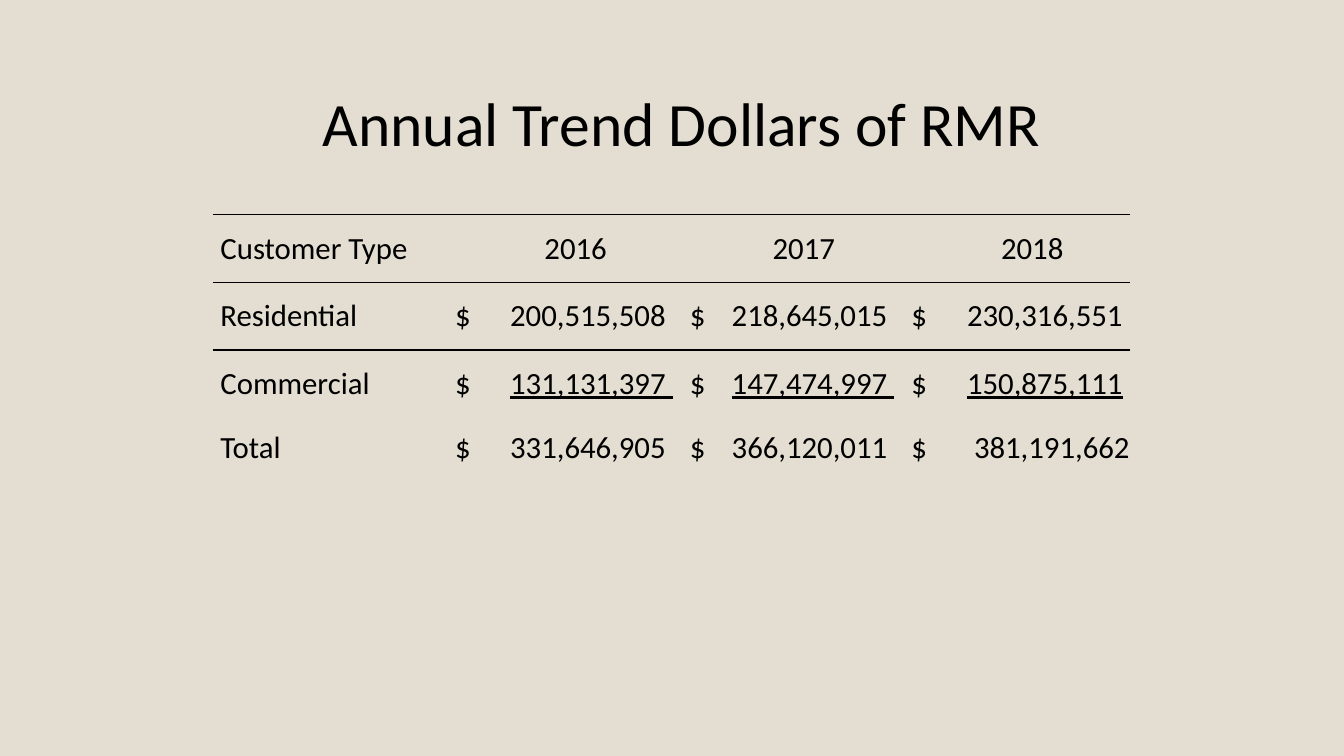
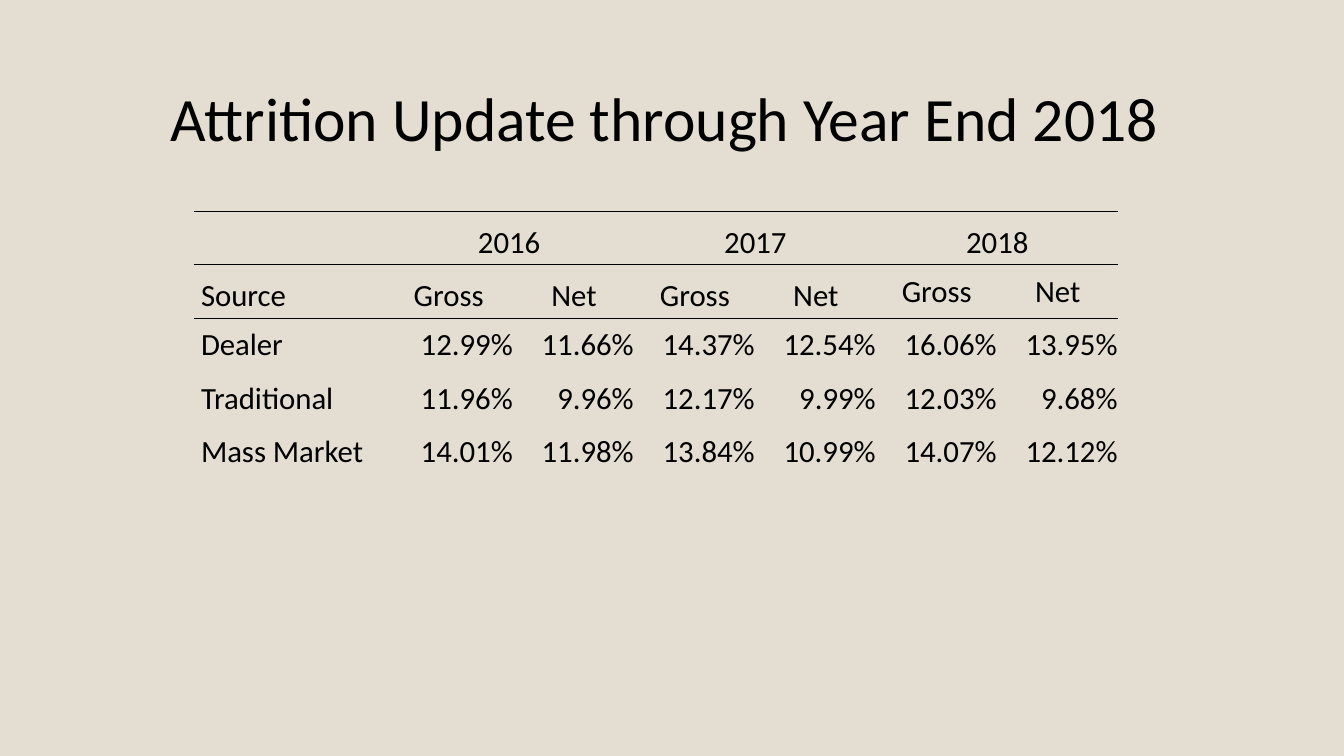
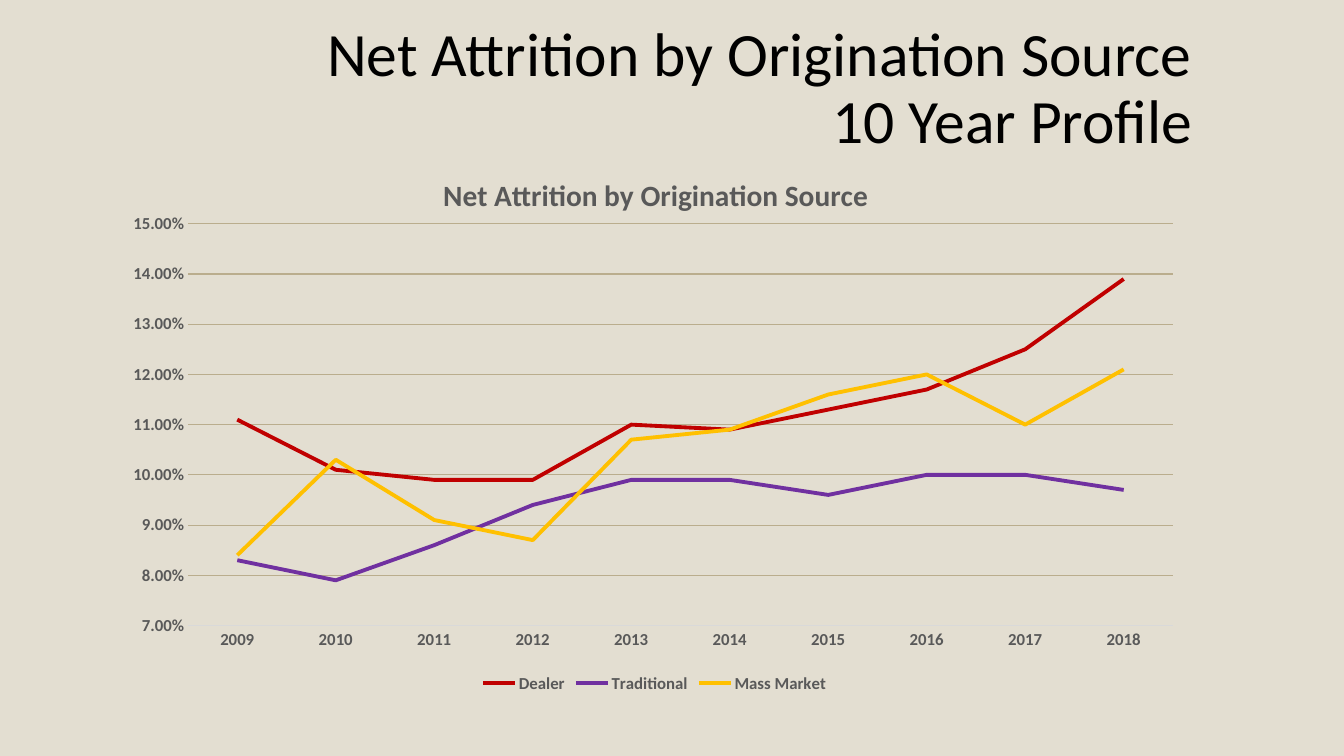
from dataclasses import dataclass

from pptx import Presentation
from pptx.chart.data import CategoryChartData
from pptx.dml.color import RGBColor
from pptx.enum.chart import (
    XL_CHART_TYPE, XL_LEGEND_POSITION, XL_MARKER_STYLE, XL_TICK_MARK)
from pptx.enum.text import MSO_ANCHOR, PP_ALIGN
from pptx.oxml import parse_xml
from pptx.oxml.ns import nsdecls, qn
from pptx.util import Pt

LINE = XL_CHART_TYPE.LINE
LEGEND_BOTTOM = XL_LEGEND_POSITION.BOTTOM
NO_MARKER = XL_MARKER_STYLE.NONE
NO_TICK = XL_TICK_MARK.NONE
MIDDLE, BOTTOM = MSO_ANCHOR.MIDDLE, MSO_ANCHOR.BOTTOM
LEFT, CENTER, RIGHT = PP_ALIGN.LEFT, PP_ALIGN.CENTER, PP_ALIGN.RIGHT
NO_STYLE_TABLE = "{2D5ABB26-0587-4C30-8999-92F81FD0307C}"
BLANK_LAYOUT = 6


@dataclass(frozen=True)
class Theme:
    font: str = "Calibri"
    paper: str = "E3DED1"
    ink: str = "000000"
    chart_ink: str = "595959"
    axis: str = "D9D9D9"
    grid: str = "BAAD8D"
    title_size: float = 44
    table_size: float = 22
    chart_title_size: float = 21
    chart_size: float = 12


THEME = Theme()

# Cell formats: alignment and insets (side, top and bottom)
CELL_KINDS = {
    "label": (LEFT, 5.2, 2.6),
    "head": (CENTER, 5.2, 2.6),
    "sign": (RIGHT, 5.2, 2.6),
    "number": (RIGHT, 0.5, 0.5),
}

RMR_ROWS = [
    ["Customer Type", "", "2016", "", "2017", "", "2018"],
    ["Residential", "$", "200,515,508 ", "$", "218,645,015 ", "$", "230,316,551 "],
    ["Commercial", "$", "131,131,397 ", "$", "147,474,997 ", "$", "150,875,111"],
    ["Total", "$", "331,646,905 ", "$", "366,120,011 ", "$", "381,191,662"],
]

ATTRITION_ROWS = [
    ["", "2016", "", "2017", "", "2018", ""],
    ["Source"] + ["Gross", "Net"] * 3,
    ["Dealer", "12.99%", "11.66%", "14.37%", "12.54%", "16.06%", "13.95%"],
    ["Traditional", "11.96%", "9.96%", "12.17%", "9.99%", "12.03%", "9.68%"],
    ["Mass Market", "14.01%", "11.98%", "13.84%", "10.99%", "14.07%", "12.12%"],
]

YEARS = [str(year) for year in range(2009, 2019)]
NET_ATTRITION = {
    "Dealer": ("C00000", [0.111, 0.101, 0.099, 0.099, 0.11,
                          0.109, 0.113, 0.117, 0.125, 0.139]),
    "Traditional": ("7030A0", [0.083, 0.079, 0.086, 0.094, 0.099,
                               0.099, 0.096, 0.1, 0.1, 0.097]),
    "Mass Market": ("FFC000", [0.084, 0.103, 0.091, 0.087, 0.107,
                               0.109, 0.116, 0.12, 0.11, 0.121]),
}


def rgb(code):
    return RGBColor.from_string(code)


def apply(target, values):
    for name, value in values.items():
        setattr(target, name, value)


def style_font(font, size, color, bold=False):
    apply(font, {"name": THEME.font, "size": Pt(size), "bold": bold})
    font.color.rgb = rgb(color)


def points(*lengths):
    return [Pt(length) for length in lengths]


# Titles
def add_page(deck, title, frame):
    page = deck.slides.add_slide(deck.slide_layouts[BLANK_LAYOUT])
    box = page.shapes.add_textbox(*points(*frame))
    apply(box.text_frame, {"word_wrap": True, "vertical_anchor": MIDDLE})
    para = box.text_frame.paragraphs[0]
    para.text = title
    apply(para, {"alignment": RIGHT, "line_spacing": 0.9})
    for span in para.runs:
        style_font(span.font, THEME.title_size, THEME.ink)
    return page


# Tables
def add_border(cell, side):
    edge = parse_xml(
        f'<a:ln{side} {nsdecls("a")} w="{Pt(1)}"><a:solidFill>'
        f'<a:srgbClr val="{THEME.ink}"/></a:solidFill></a:ln{side}>')
    cell._tc.get_or_add_tcPr().insert(0, edge)


def add_span(para, text):
    span = para.add_run()
    span.text = text
    style_font(span.font, THEME.table_size, THEME.ink)


def fill_cell(cell, text, kind, anchor):
    alignment, side, edge = CELL_KINDS[kind]
    apply(cell, {"margin_left": Pt(side), "margin_right": Pt(side),
                 "margin_top": Pt(edge), "margin_bottom": Pt(edge),
                 "vertical_anchor": anchor})
    cell.fill.background()
    para = cell.text_frame.paragraphs[0]
    para.alignment = alignment
    if text:
        add_span(para, text)


def add_ruled_table(page, origin, widths, heights, rows, kinds, head_rows, head_anchor):
    size = sum(widths), sum(heights)
    frame = page.shapes.add_table(len(rows), len(widths), *points(*origin, *size))
    table = frame.table
    apply(table, {"first_row": False, "horz_banding": False})
    table._tbl.tblPr.find(qn("a:tableStyleId")).text = NO_STYLE_TABLE
    for column, width in zip(table.columns, widths):
        column.width = Pt(width)
    for row, height in zip(table.rows, heights):
        row.height = Pt(height)
    for r, texts in enumerate(rows):
        for c, text in enumerate(texts):
            is_head = r < head_rows
            kind = "head" if is_head and c else kinds[c]
            cell = table.cell(r, c)
            fill_cell(cell, text, kind, head_anchor if is_head else MIDDLE)
            # Rules lie above the first row and below the first two
            if r < 2:
                add_border(cell, "B")
            if r == 0:
                add_border(cell, "T")
    return table


# Chart
def set_layout(parent, index, values):
    old = parent.find(qn("c:layout"))
    if old is not None:
        parent.remove(old)
    items = "".join(f'<c:{name} val="{value}"/>' for name, value in values.items())
    parent.insert(index, parse_xml(
        f'<c:layout {nsdecls("c")}><c:manualLayout>{items}</c:manualLayout></c:layout>'))


def add_line_chart(page, frame, title, title_origin, plot_frame, categories, series):
    data = CategoryChartData(number_format="0.00%")
    data.categories = categories
    for name, (_, values) in series.items():
        data.add_series(name, values)
    chart = page.shapes.add_chart(LINE, *points(*frame), data).chart
    style_font(chart.font, THEME.chart_size, THEME.chart_ink, bold=True)

    para = chart.chart_title.text_frame.paragraphs[0]
    span = para.add_run()
    span.text = title
    style_font(span.font, THEME.chart_title_size, THEME.chart_ink, bold=True)

    for line, (color, _) in zip(chart.plots[0].series, series.values()):
        line.smooth = False
        line.marker.style = NO_MARKER
        line.format.line.width = Pt(2.75)
        line.format.line.color.rgb = rgb(color)
    chart.plots[0].vary_by_categories = False

    for axis in (chart.category_axis, chart.value_axis):
        apply(axis, {"major_tick_mark": NO_TICK, "minor_tick_mark": NO_TICK})
        style_font(axis.tick_labels.font, THEME.chart_size, THEME.chart_ink, bold=True)
    chart.category_axis.format.line.color.rgb = rgb(THEME.axis)
    chart.category_axis.format.line.width = Pt(1)

    value_axis = chart.value_axis
    apply(value_axis, {"minimum_scale": 0.07, "maximum_scale": 0.15,
                       "major_unit": 0.01, "has_major_gridlines": True})
    apply(value_axis.tick_labels, {"number_format": "0.00%",
                                   "number_format_is_linked": False})
    value_axis.format.line.fill.background()
    grid_line = value_axis.major_gridlines.format.line
    grid_line.color.rgb = rgb(THEME.grid)
    grid_line.width = Pt(0.75)

    chart.has_legend = True
    apply(chart.legend, {"position": LEGEND_BOTTOM, "include_in_layout": False})
    style_font(chart.legend.font, THEME.chart_size, THEME.chart_ink, bold=True)

    # Layouts are fractions of the chart's width and height
    width, height = frame[2:]
    edges = {"xMode": "edge", "yMode": "edge"}
    left, top = title_origin
    chart_node = chart._chartSpace.chart
    set_layout(chart_node.find(qn("c:title")), 1,
               {**edges, "x": left / width, "y": top / height})
    left, top, plot_width, plot_height = plot_frame
    set_layout(chart_node.plotArea, 0,
               {"layoutTarget": "inner", **edges, "x": left / width, "y": top / height,
                "w": plot_width / width, "h": plot_height / height})


# Slides
def build_rmr(deck):
    page = add_page(deck, "Annual Trend Dollars of RMR", (73.8, 38, 676.8, 104))
    table = add_ruled_table(
        page, (152.3, 153.4), [156, 33.1, 139.6, 28.1, 130.2, 28.1, 140],
        [48.3] * 3 + [44], RMR_ROWS, ["label"] + ["sign", "number"] * 3, 1, MIDDLE)
    table.cell(0, 0).merge(table.cell(0, 1))
    # Underline the last amounts before the total
    for column in (2, 4, 6):
        para = table.cell(2, column).text_frame.paragraphs[0]
        para.runs[0].font.underline = True
    add_span(para, " ")


def build_attrition(deck):
    page = add_page(deck, "Attrition Update through Year End 2018",
                    (101.5, 28.8, 733.7, 116))
    table = add_ruled_table(
        page, (138.4, 151), [135.8, 92.6] + [86.4] * 5, [38.2] * 5,
        ATTRITION_ROWS, ["label"] + ["number"] * 6, 2, BOTTOM)
    for column in (1, 3, 5):
        table.cell(0, column).merge(table.cell(0, column + 1))
    for column in (5, 6):
        table.cell(1, column).vertical_anchor = MIDDLE


def build_profile(deck):
    page = add_page(deck, "Net Attrition by Origination Source\v10 Year Profile",
                    (5.8, 12.6, 853.2, 103.7))
    add_line_chart(page, (76.3, 109.4, 782.6, 388.8),
                   "Net Attrition by Origination Source", (236.5, 11.6),
                   (58, 50.5, 703.6, 287), YEARS, NET_ATTRITION)


def main():
    deck = Presentation()
    apply(deck, {"slide_width": Pt(960), "slide_height": Pt(540)})
    backdrop = deck.slide_master.background.fill
    backdrop.solid()
    backdrop.fore_color.rgb = rgb(THEME.paper)
    for build in (build_rmr, build_attrition, build_profile):
        build(deck)
    deck.save("out.pptx")


if __name__ == "__main__":
    main()
